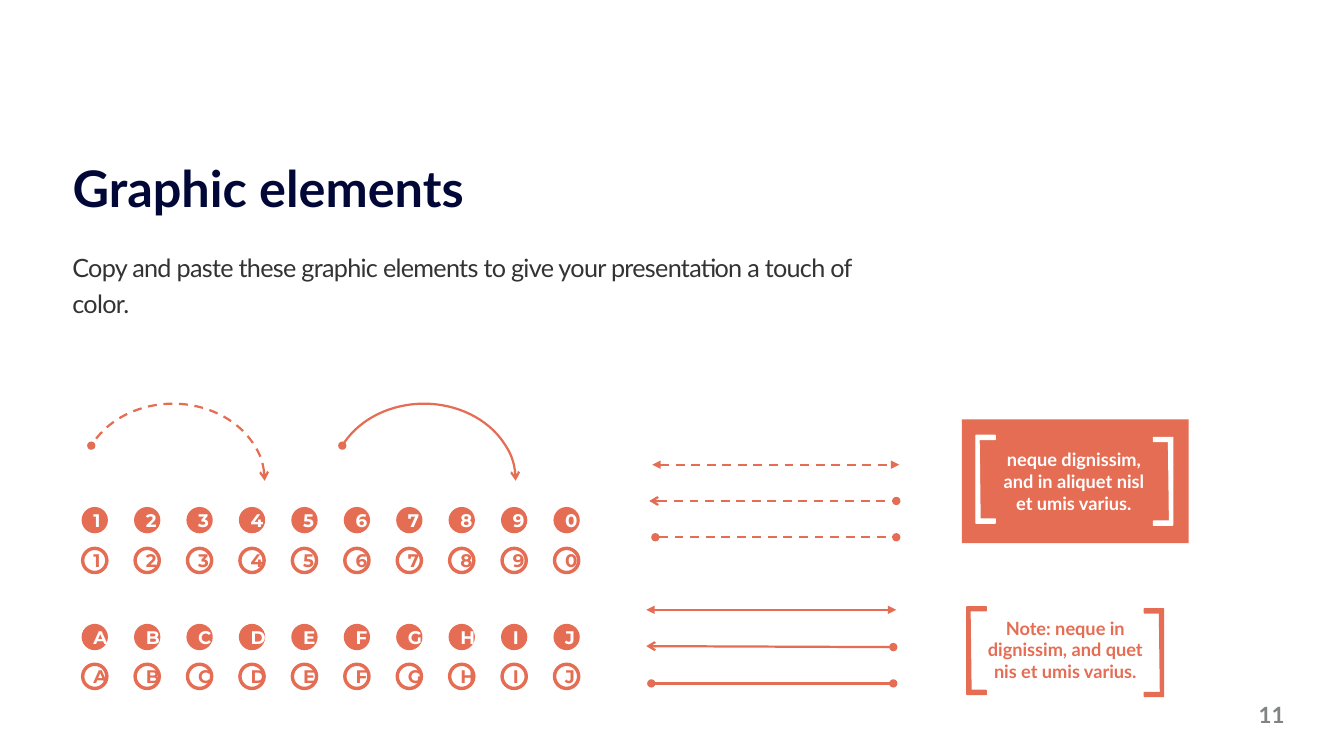
from dataclasses import dataclass

import pptx
import pptx.dml.color
import pptx.enum.dml
import pptx.enum.shapes
import pptx.enum.text
import pptx.oxml.ns
import pptx.oxml.xmlchemy
import pptx.util

Inches = pptx.util.Inches
SHAPE = pptx.enum.shapes.MSO_SHAPE
ALIGN = pptx.enum.text.PP_ALIGN
ANCHOR = pptx.enum.text.MSO_ANCHOR


@dataclass(frozen=True)
class Theme:
    coral: str = "E56D54"
    white: str = "FFFFFF"
    navy: str = "010838"
    body: str = "333333"
    gray: str = "828383"
    font: str = "Lato"
    badge_font: str = "Montserrat"
    title_size: float = 36
    body_size: float = 18
    number_size: float = 16
    label_size: float = 13
    rule_width: float = 1.6


THEME = Theme()


def rgb(color):
    return pptx.dml.color.RGBColor.from_string(color)


def put_text(shape, text, *, size, color, font=THEME.font, bold=True, align=ALIGN.LEFT,
             anchor=ANCHOR.TOP, line_spacing=None, tracking=None, insets=(0.1, 0.05)):
    frame = shape.text_frame
    frame.word_wrap = True
    frame.auto_size = pptx.enum.text.MSO_AUTO_SIZE.NONE
    frame.vertical_anchor = anchor
    frame.margin_left = frame.margin_right = Inches(insets[0])
    frame.margin_top = frame.margin_bottom = Inches(insets[1])
    paragraph = frame.paragraphs[0]
    paragraph.alignment = align
    paragraph.line_spacing = line_spacing
    run = paragraph.add_run()
    run.text = text
    run.font.name = font
    run.font.size = pptx.util.Pt(size)
    run.font.bold = bold
    run.font.color.rgb = rgb(color)
    if tracking is not None:
        run.font._element.set("spc", str(int(tracking * 100)))


def add_text_box(slide, box, text, **text_format):
    put_text(slide.shapes.add_textbox(*map(Inches, box)), text, **text_format)


def paint(shape, fill=None, line=None, width=1.0):
    shape.shadow.inherit = False
    if fill:
        shape.fill.solid()
        shape.fill.fore_color.rgb = rgb(fill)
    else:
        shape.fill.background()
    if line:
        shape.line.color.rgb = rgb(line)
        shape.line.width = pptx.util.Pt(width)
    else:
        shape.line.fill.background()


def style_rule(rule, head, tail, dashed):
    """Colour, dash and end marks shared by arcs and straight rules."""
    rule.line.color.rgb = rgb(THEME.coral)
    rule.line.width = pptx.util.Pt(THEME.rule_width)
    if dashed:
        rule.line.dash_style = pptx.enum.dml.MSO_LINE.DASH
    outline = rule.line._get_or_add_ln()
    for tag, mark in (("a:headEnd", head), ("a:tailEnd", tail)):
        end = pptx.oxml.xmlchemy.OxmlElement(tag)
        end.set("type", mark)
        outline.append(end)


# Heading, introduction and page number
def add_heading(slide, left, top):
    title = slide.shapes.title
    title.left, title.top, title.width, title.height = map(Inches, (left, top, 4.67, 0.78))
    put_text(title, "Graphic elements", size=THEME.title_size, color=THEME.navy,
             anchor=ANCHOR.BOTTOM, line_spacing=0.9)
    add_text_box(slide, (left, top + 0.95, 7.96, 1.36),
                 "Copy and paste these graphic elements to give your presentation a touch of color.",
                 size=THEME.body_size, color=THEME.body, bold=False,
                 line_spacing=pptx.util.Pt(26), tracking=-0.5)


def add_page_number(slide, box):
    add_text_box(slide, box, "11", size=THEME.number_size, color=THEME.gray,
                 align=ALIGN.RIGHT, anchor=ANCHOR.MIDDLE, insets=(0.13, 0.07))


# Curved arrows
def add_curved_arrow(slide, box, dashed):
    arc = slide.shapes.add_shape(SHAPE.ARC, *map(Inches, box))
    arc.adjustments[0], arc.adjustments[1] = 162, 40.02
    arc.rotation = 270
    arc._element.spPr.find(pptx.oxml.ns.qn("a:xfrm")).set("flipV", "1")
    paint(arc)
    style_rule(arc, "arrow", "oval", dashed)


# Rows of numbered and lettered badges
def add_badge_row(slide, left, top, labels, solid):
    pitch, diameter = 0.52, 0.24
    for column, label in enumerate(labels):
        badge = slide.shapes.add_shape(SHAPE.OVAL, Inches(left + column * pitch), Inches(top),
                                       Inches(diameter), Inches(diameter))
        paint(badge, THEME.coral if solid else None, THEME.coral, 1.5 if solid else 2.45)
        put_text(badge, label, size=THEME.label_size, font=THEME.badge_font,
                 color=THEME.white if solid else THEME.coral,
                 align=ALIGN.CENTER, anchor=ANCHOR.MIDDLE)


# Straight arrows
def add_straight_arrow(slide, start, finish, head, tail, dashed):
    arrow = slide.shapes.add_connector(pptx.enum.shapes.MSO_CONNECTOR.STRAIGHT,
                                       *map(Inches, start + finish))
    style_rule(arrow, head, tail, dashed)
    arrow._element.spPr.append(pptx.oxml.xmlchemy.OxmlElement("a:effectLst"))


# Bracketed notes
def add_bracket(slide, left, top, color, closing=False):
    width, height, bar = 0.19, 0.87, 0.04
    outline = [(width, 0), (0, 0), (0, height), (width, height),
               (width, height - bar), (bar, height - bar), (0.03, bar), (width, bar)]
    if closing:
        outline = [(width - x, height - y) for x, y in outline]
    points = [(Inches(left + x), Inches(top + y)) for x, y in outline]
    builder = slide.shapes.build_freeform(*points[0])
    builder.add_line_segments(points[1:], close=True)
    paint(builder.convert_to_shape(), color, color)


def add_note(slide, left, top, text_box, text, color):
    add_bracket(slide, left, top, color)
    add_bracket(slide, left + 1.76, top + 0.02, color, closing=True)
    add_text_box(slide, text_box, text, size=THEME.label_size, color=color, align=ALIGN.CENTER)


def add_note_panel(slide, left, top):
    panel = slide.shapes.add_shape(SHAPE.RECTANGLE, Inches(left), Inches(top),
                                   Inches(2.25), Inches(1.23))
    paint(panel, THEME.coral)
    add_note(slide, left + 0.14, top + 0.16, (left + 0.25, top + 0.24, 1.72, 0.76),
             "neque dignissim, and in aliquet nisl et umis varius.", THEME.white)


def add_plain_note(slide, left, top):
    add_note(slide, left, top, (left, top + 0.05, 1.95, 0.76),
             "Note: neque in dignissim, and quet nis et umis varius.", THEME.coral)


def build_graphic_elements(deck):
    slide = deck.slides.add_slide(deck.slide_layouts[5])
    add_heading(slide, 0.62, 1.44)
    add_page_number(slide, (12.08, 6.8, 0.79, 0.58))

    for left, dashed in ((0.95, True), (3.44, False)):
        add_curved_arrow(slide, (left, 3.86, 1.53, 1.82), dashed)

    for top, labels, solid in ((5.04, "1234567890", True), (5.44, "1234567890", False),
                               (6.2, "ABCDEFGHIJ", True), (6.59, "ABCDEFGHIJ", False)):
        add_badge_row(slide, 0.82, top, labels, solid)

    for start, finish, head, tail, dashed in (
            ((6.47, 4.61), (8.92, 4.61), "triangle", "triangle", True),
            ((6.44, 4.97), (8.89, 4.97), "arrow", "oval", True),
            ((6.5, 5.33), (8.89, 5.33), "oval", "oval", True),
            ((6.41, 6.05), (8.89, 6.05), "triangle", "triangle", False),
            ((6.41, 6.41), (8.86, 6.42), "arrow", "oval", False),
            ((6.46, 6.78), (8.86, 6.78), "oval", "oval", False)):
        add_straight_arrow(slide, start, finish, head, tail, dashed)

    add_note_panel(slide, 9.54, 4.16)
    add_plain_note(slide, 9.59, 6.02)


def main():
    deck = pptx.Presentation()
    deck.slide_width, deck.slide_height = Inches(13.33), Inches(7.5)
    build_graphic_elements(deck)
    deck.save("out.pptx")


if __name__ == "__main__":
    main()
